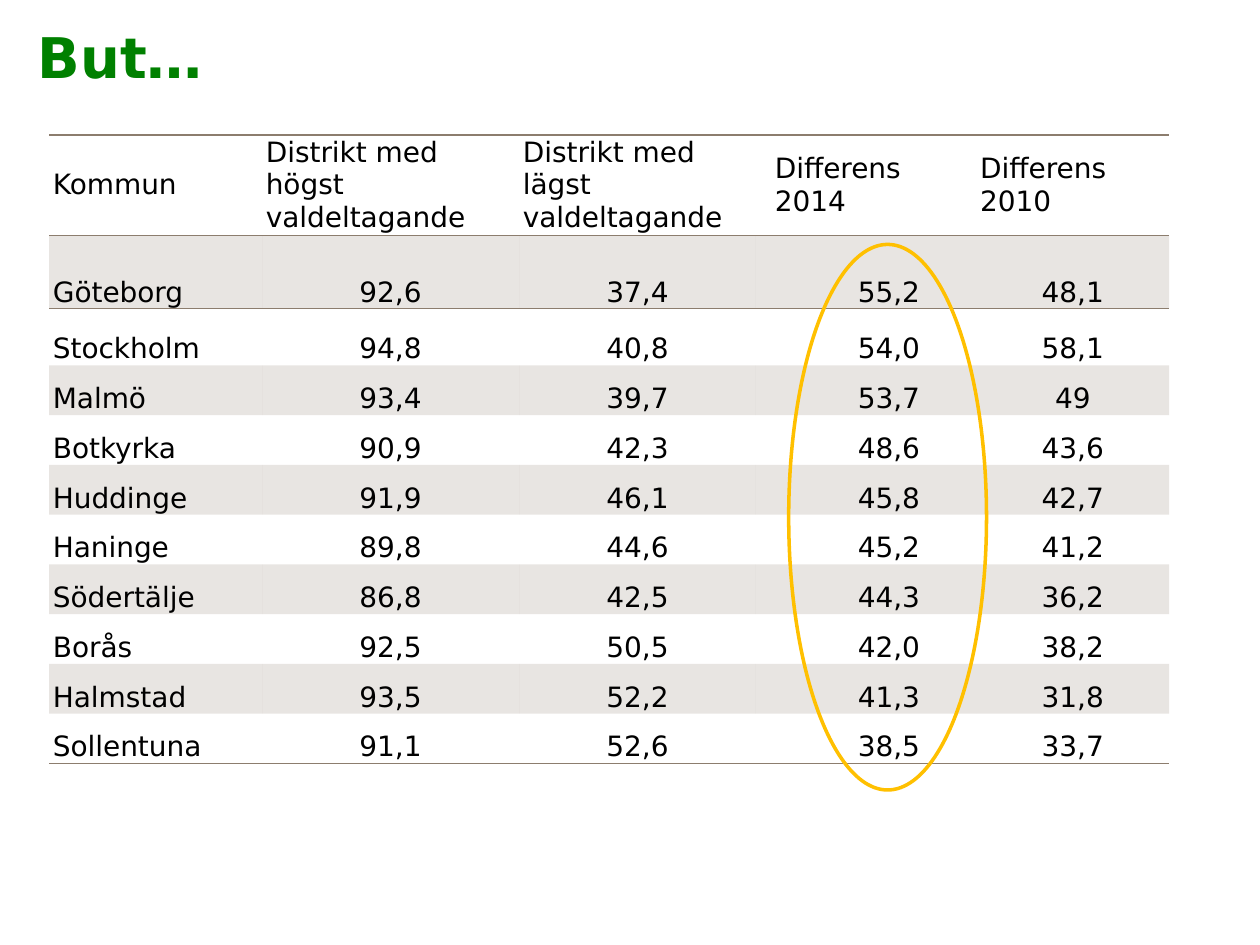
"""Builds a slide comparing turnout between districts in Swedish municipalities."""
from dataclasses import dataclass

from lxml import etree
from pptx import Presentation
from pptx import util as u
from pptx.dml import color
from pptx.enum import shapes, text
from pptx.oxml import ns


@dataclass(frozen=True)
class Theme:
    """Colours, font and type sizes of the slide."""
    font: str = "DejaVu Sans"
    title: str = "008000"
    body: str = "000000"
    rule: str = "8C7D6E"
    highlight: str = "FFC000"
    title_size: int = 32
    body_size: int = 16
    band_opacity: int = 20
    no_grid_style: str = "{2D5ABB26-0587-4C30-8999-92F81FD0307C}"


HEADINGS = ("Kommun", "Distrikt med högst valdeltagande",
            "Distrikt med lägst valdeltagande", "Differens 2014", "Differens 2010")
TURNOUT = (
    ("Göteborg", "92,6", "37,4", "55,2", "48,1"),
    ("Stockholm", "94,8", "40,8", "54,0", "58,1"),
    ("Malmö", "93,4", "39,7", "53,7", "49"),
    ("Botkyrka", "90,9", "42,3", "48,6", "43,6"),
    ("Huddinge", "91,9", "46,1", "45,8", "42,7"),
    ("Haninge", "89,8", "44,6", "45,2", "41,2"),
    ("Södertälje", "86,8", "42,5", "44,3", "36,2"),
    ("Borås", "92,5", "50,5", "42,0", "38,2"),
    ("Halmstad", "93,5", "52,2", "41,3", "31,8"),
    ("Sollentuna", "91,1", "52,6", "38,5", "33,7"),
)
COLUMN_WIDTHS = (1.69, 2.04, 1.88, 1.75, 1.53)
ROW_HEIGHTS = (0.8, 0.58, 0.45) + (0.395,) * 8
DIFFERENCE_2014 = 3


class SlideBuilder:
    """Draws styled elements on the current slide."""

    def __init__(self, slide, theme):
        self.slide = slide
        self.theme = theme

    def style(self, paragraph, size, rgb, bold=False):
        """Formats the runs of a paragraph."""
        for run in paragraph.runs:
            run.font.name = self.theme.font
            run.font.size = u.Pt(size)
            run.font.bold = bold
            run.font.color.rgb = color.RGBColor.from_string(rgb)

    def title(self, wording, left, top, width, height):
        """Adds the slide heading."""
        heading = self.slide.shapes.add_textbox(
            *map(u.Inches, (left, top, width, height))).text_frame
        heading.word_wrap = True
        heading.text = wording
        self.style(heading.paragraphs[0], self.theme.title_size, self.theme.title, True)

    def ring(self, left, top, width, height):
        """Adds an outlined ellipse."""
        ring = self.slide.shapes.add_shape(
            shapes.MSO_SHAPE.OVAL, *map(u.Inches, (left, top, width, height)))
        ring.shadow.inherit = False
        ring.fill.background()
        ring.line.color.rgb = color.RGBColor.from_string(self.theme.highlight)
        ring.line.width = u.Pt(2)

    def rules(self, cell, sides):
        """Draws horizontal rules on the given sides of a cell."""
        properties = cell._tc.get_or_add_tcPr()
        for position, side in enumerate(sides):
            line = etree.Element(ns.qn(f"a:ln{side}"), w=str(u.Pt(1)))
            fill = etree.SubElement(line, ns.qn("a:solidFill"))
            etree.SubElement(fill, ns.qn("a:srgbClr"), val=self.theme.rule)
            properties.insert(position, line)

    def band(self, cell):
        """Tints a cell with the translucent rule colour."""
        cell.fill.solid()
        cell.fill.fore_color.rgb = color.RGBColor.from_string(self.theme.rule)
        tint = cell._tc.tcPr.find(".//" + ns.qn("a:srgbClr"))
        etree.SubElement(tint, ns.qn("a:alpha"), val=str(self.theme.band_opacity * 1000))

    def cell(self, cell, wording, row, column, last_row):
        """Fills and formats one table cell."""
        header = row == 0
        cell.margin_left = cell.margin_right = u.Inches(0.03)
        cell.margin_top = cell.margin_bottom = 0
        cell.vertical_anchor = (text.MSO_ANCHOR.MIDDLE if header
                                else text.MSO_ANCHOR.BOTTOM)
        paragraph = cell.text_frame.paragraphs[0]
        paragraph.text = wording
        if header and column >= DIFFERENCE_2014:
            paragraph.alignment = text.PP_ALIGN.JUSTIFY
        elif not header and column:
            paragraph.alignment = text.PP_ALIGN.CENTER
        if column == DIFFERENCE_2014:
            indent = ("marL", 0.12) if header else ("indent", 0.36)
            paragraph._p.get_or_add_pPr().set(indent[0], str(u.Inches(indent[1])))
        self.style(paragraph, self.theme.body_size, self.theme.body)
        if row % 2:
            self.band(cell)
        else:
            cell.fill.background()
        self.rules(cell, {0: "TB", 1: "T", last_row: "B"}.get(row, ""))

    def table(self, rows, left, top):
        """Adds the ruled and banded table."""
        table = self.slide.shapes.add_table(
            len(rows), len(COLUMN_WIDTHS), u.Inches(left), u.Inches(top),
            u.Inches(sum(COLUMN_WIDTHS)), u.Inches(sum(ROW_HEIGHTS))).table
        table.first_row = table.horz_banding = False
        table._tbl.tblPr.find(ns.qn("a:tableStyleId")).text = self.theme.no_grid_style
        for column, width in zip(table.columns, COLUMN_WIDTHS):
            column.width = u.Inches(width)
        for row, height in zip(table.rows, ROW_HEIGHTS):
            row.height = u.Inches(height)
        for r, entries in enumerate(rows):
            for c, wording in enumerate(entries):
                self.cell(table.cell(r, c), wording, r, c, len(rows) - 1)


def main():
    """Creates and saves the presentation."""
    deck = Presentation()
    deck.slide_width, deck.slide_height = u.Inches(10), u.Inches(7.5)
    builder = SlideBuilder(deck.slides.add_slide(deck.slide_layouts[6]), Theme())
    builder.table((HEADINGS,) + TURNOUT, 0.39, 1.07)
    builder.title("But…", 0.2, 0.13, 9, 0.63)
    builder.ring(6.26, 1.94, 1.57, 4.33)
    deck.save("out.pptx")


if __name__ == "__main__":
    main()
